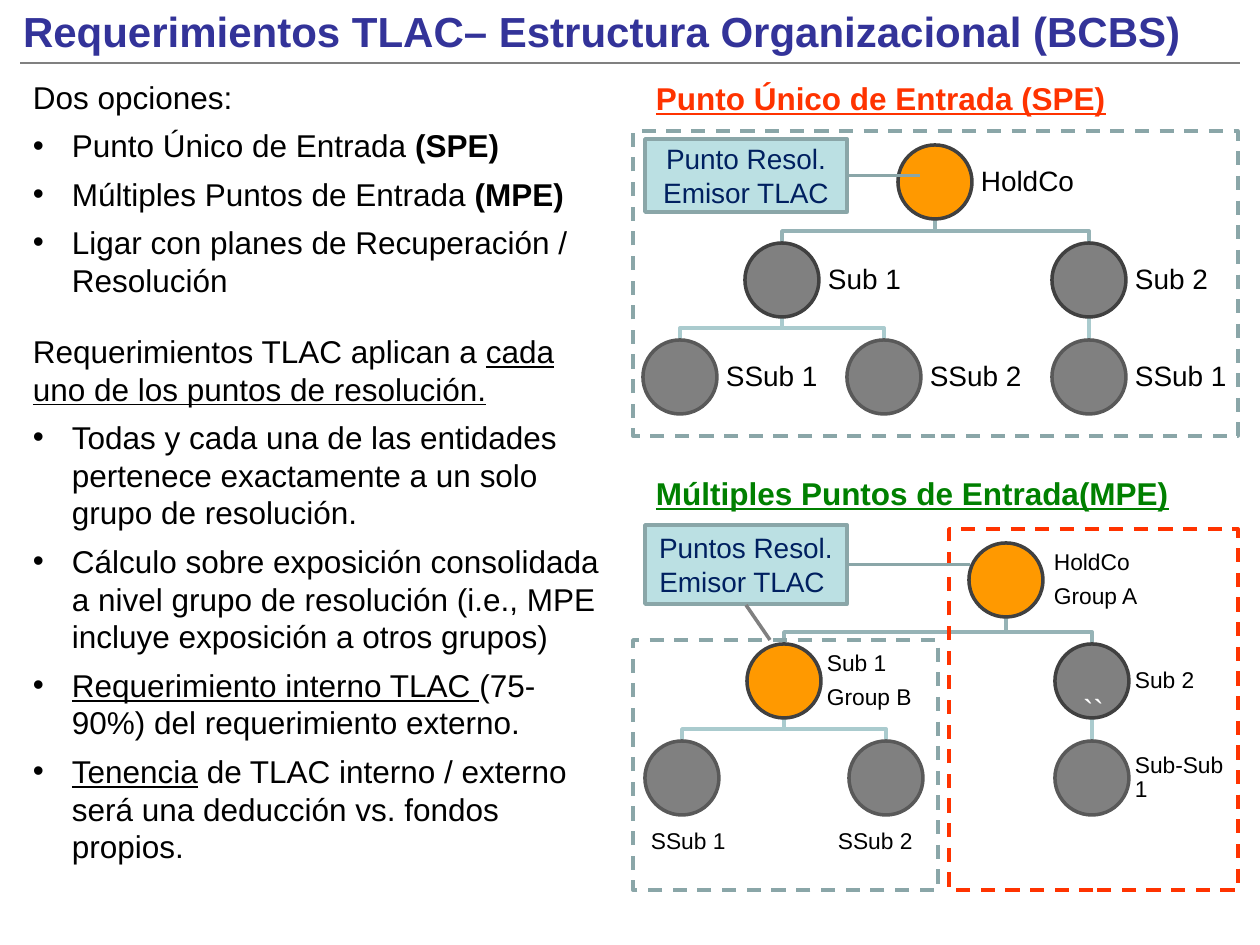
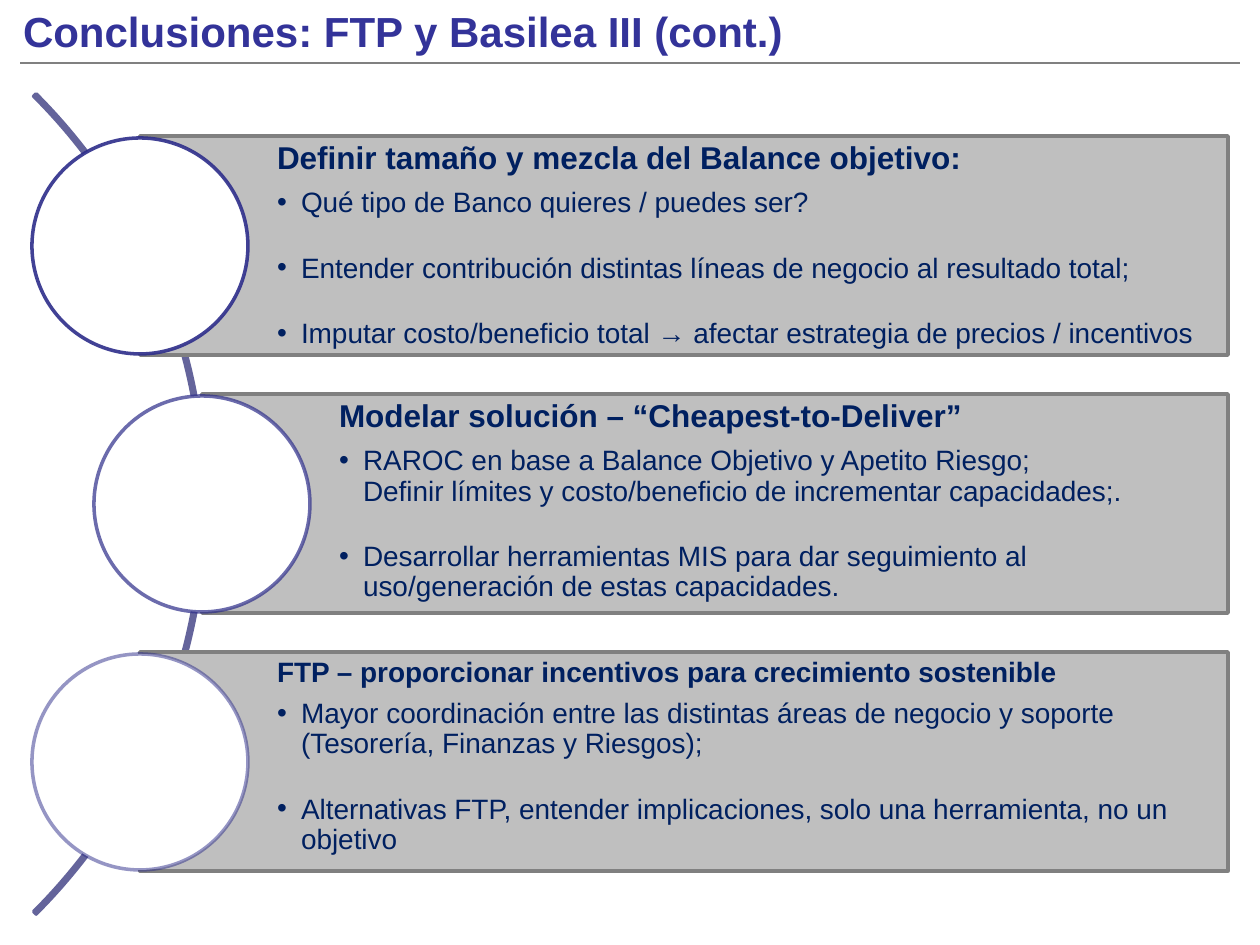
from dataclasses import dataclass

from lxml import etree
from pptx import Presentation
from pptx import util as u
from pptx.dml.color import RGBColor
from pptx.enum import dml, shapes, text
from pptx.oxml import ns

EMU_PER_PX = 914400 / 126
FONT = "Arial"
BLACK = RGBColor(0x00, 0x00, 0x00)
WHITE = RGBColor(0xFF, 0xFF, 0xFF)
TITLE_BLUE = RGBColor(0x33, 0x33, 0x99)
NAVY = RGBColor(0x00, 0x20, 0x60)
GRAY = RGBColor(0x80, 0x80, 0x80)
PANEL_GRAY = RGBColor(0xBF, 0xBF, 0xBF)
ORANGE = RGBColor(0xFF, 0x99, 0x00)
RED = RGBColor(0xFF, 0x33, 0x00)
GREEN = RGBColor(0x00, 0x80, 0x00)
CALLOUT_FILL = RGBColor(0xBB, 0xE0, 0xE3)
CALLOUT_LINE = RGBColor(0x8A, 0xA6, 0xA8)
UPPER_EDGE = RGBColor(0x96, 0xB3, 0xB6)
LOWER_EDGE = RGBColor(0xAA, 0xCB, 0xCE)
UPPER_RING = RGBColor(0x40, 0x40, 0x40)
LOWER_RING = RGBColor(0x59, 0x59, 0x59)
ARC_BLUE = RGBColor(0x64, 0x64, 0x9B)
RING_BLUE = RGBColor(0x2D, 0x2D, 0x8A)
NODE = 74
SHAPE = shapes.MSO_SHAPE
MIDDLE = text.MSO_ANCHOR.MIDDLE


@dataclass
class Entity:
    x: int
    y: int
    labels: tuple
    parent: int = -1
    level: int = 0
    fill: RGBColor = GRAY
    label_at: tuple = (NODE, 0)


def px(value):
    return round(value * EMU_PER_PX)


def box(*lengths):
    return [px(length) for length in lengths]


def set_margins(frame, left, top, right, bottom):
    frame.margin_left, frame.margin_top = px(left), px(top)
    frame.margin_right, frame.margin_bottom = px(right), px(bottom)
    frame.word_wrap = True


def write_paragraph(frame, runs, size, color=BLACK, bold=None, underline=None,
                    after=0, spacing=1.0, align=text.PP_ALIGN.LEFT, indent=0):
    paragraph = frame.paragraphs[0]
    if paragraph.runs:
        paragraph = frame.add_paragraph()
    paragraph.alignment = align
    paragraph.line_spacing = spacing
    paragraph.space_after = u.Pt(after)
    if indent:
        properties = paragraph._p.get_or_add_pPr()
        properties.set("marL", str(px(indent)))
        properties.set("indent", str(-px(indent)))
        etree.SubElement(properties, ns.qn("a:buFont"), typeface=FONT)
        etree.SubElement(properties, ns.qn("a:buChar"), char="•")
    font = paragraph.font
    font.name, font.size, font.bold, font.underline = FONT, u.Pt(size), bold, underline
    font.color.rgb = color
    for words, style in [(runs, "")] if isinstance(runs, str) else runs:
        for number, line in enumerate(words.split("\n")):
            if number:
                paragraph.add_line_break()
            run = paragraph.add_run()
            run.text = line
            if style == "bold":
                run.font.bold = True
            elif style == "underline":
                run.font.underline = True


def add_text(slide, bounds, margins=(13, 6, 13, 6), anchor=text.MSO_ANCHOR.TOP):
    frame = slide.shapes.add_textbox(*box(*bounds)).text_frame
    set_margins(frame, *margins)
    frame.vertical_anchor = anchor
    return frame


def style_line(line, color, width=2):
    line.color.rgb = color
    line.width = u.Pt(width)


def add_figure(slide, kind, bounds, line_color, fill=None):
    shape = slide.shapes.add_shape(kind, *box(*bounds))
    shape.shadow.inherit = False
    style_line(shape.line, line_color)
    if fill is None:
        shape.fill.background()
    else:
        shape.fill.solid()
        shape.fill.fore_color.rgb = fill
    return shape


def add_line(slide, start, end, color, width=2):
    connector = slide.shapes.add_connector(
        shapes.MSO_CONNECTOR.STRAIGHT, *box(*start, *end))
    style_line(connector.line, color, width)
    etree.SubElement(connector._element.spPr, ns.qn("a:effectLst"))


def add_title(slide, words):
    write_paragraph(add_text(slide, (10, 0, 1218, 63)), words, 24, TITLE_BLUE, bold=True)
    add_line(slide, (1240, 63), (20, 63), GRAY, 1.25)


def add_branch(slide, parent, child):
    color = UPPER_EDGE if child.level == 1 else LOWER_EDGE
    start = (parent.x + NODE // 2, parent.y + NODE)
    end = (child.x + NODE // 2, child.y)
    if start[0] == end[0]:
        add_line(slide, start, end, color)
        return
    bend = child.y - 12
    builder = slide.shapes.build_freeform(*start, scale=EMU_PER_PX)
    builder.add_line_segments([(start[0], bend), (end[0], bend), end], close=False)
    shape = builder.convert_to_shape()
    shape.shadow.inherit = False
    shape.fill.background()
    style_line(shape.line, color)


def add_tree(slide, entities, size, margin):
    for child in reversed(entities):
        if child.parent >= 0:
            add_branch(slide, entities[child.parent], child)
    for entity in entities:
        ring = LOWER_RING if entity.level == 2 else UPPER_RING
        add_figure(slide, SHAPE.OVAL, (entity.x, entity.y, NODE, NODE), ring, entity.fill)
        dx, dy = entity.label_at
        frame = add_text(slide, (entity.x + dx, entity.y + dy, 112, NODE),
                         [margin] * 4, MIDDLE)
        for label in entity.labels:
            write_paragraph(frame, label, size, after=size * 0.4, spacing=0.9)


def add_group_border(slide, bounds, color):
    shape = add_figure(slide, SHAPE.RECTANGLE, bounds, color)
    shape.line.dash_style = dml.MSO_LINE.DASH
    return shape


def add_callout(slide, bounds, reach, lines):
    shape = add_figure(slide, SHAPE.LINE_CALLOUT_1, bounds, CALLOUT_LINE, CALLOUT_FILL)
    for index, value in enumerate((0.5, reach, 0.5, 1)):
        shape.adjustments[index] = value
    set_margins(shape.text_frame, 13, 6, 13, 6)
    shape.text_frame.vertical_anchor = MIDDLE
    for line in lines:
        write_paragraph(shape.text_frame, line, 16, NAVY, align=text.PP_ALIGN.CENTER)


def add_panel(slide, left, top, heading, heading_size, bullets, opacity):
    panel = add_figure(slide, SHAPE.RECTANGLE, (left, top, 1228 - left, 219),
                       GRAY, PANEL_GRAY)
    frame = panel.text_frame
    frame.vertical_anchor = text.MSO_ANCHOR.TOP
    set_margins(frame, 137, 6, 6, 6)
    write_paragraph(frame, heading, heading_size, NAVY, bold=True,
                    after=heading_size * 0.4, spacing=0.9)
    for bullet in bullets:
        write_paragraph(frame, bullet, 16, NAVY, after=20, spacing=0.9, indent=24)
    circle = add_figure(slide, SHAPE.OVAL, (left - 108, top + 2, 216, 216),
                        RING_BLUE, WHITE)
    color = circle._element.spPr.find(ns.qn("a:ln")).find(".//" + ns.qn("a:srgbClr"))
    etree.SubElement(color, ns.qn("a:alpha"), val=str(opacity * 1000))


def build_requirements(slide):
    add_title(slide, "Requerimientos TLAC– Estructura Organizacional (BCBS)")
    frame = add_text(slide, (20, 72, 595, 832))
    bullet = 39
    content = [
        ("Dos opciones:", 0, 6),
        ([("Punto Único de Entrada ", ""), ("(SPE)", "bold")], bullet, 6),
        ([("Múltiples Puntos de Entrada ", ""), ("(MPE)", "bold")], bullet, 6),
        ("Ligar con planes de Recuperación / Resolución", bullet, 19),
        ([("Requerimientos TLAC aplican a ", ""),
          ("cada uno de los puntos de resolución.", "underline")], 0, 6),
        ("Todas y cada una de las entidades pertenece exactamente a un solo "
         "grupo de resolución.", bullet, 6),
        ("Cálculo sobre exposición consolidada a nivel grupo de resolución "
         "(i.e., MPE incluye exposición a otros grupos)", bullet, 6),
        ([("Requerimiento interno TLAC ", "underline"),
          ("(75-90%) del requerimiento externo.", "")], bullet, 6),
        ([("Tenencia", "underline"),
          (" de TLAC interno / externo será una deducción vs. fondos propios.", "")],
         bullet, 6),
    ]
    for runs, indent, after in content:
        write_paragraph(frame, runs, 18, after=after, indent=indent)

    single_entry = [
        Entity(898, 145, ("HoldCo",), fill=ORANGE),
        Entity(745, 243, ("Sub 1",), 0, 1),
        Entity(643, 340, ("SSub 1",), 1, 2),
        Entity(847, 340, ("SSub 2",), 1, 2),
        Entity(1052, 243, ("Sub 2",), 0, 1),
        Entity(1052, 340, ("SSub 1",), 4, 2),
    ]
    multiple_entry = [
        Entity(969, 543, ("HoldCo", "Group A"), fill=ORANGE, label_at=(79, 0)),
        Entity(747, 644, ("Sub 1", "Group B"), 0, 1, ORANGE),
        Entity(645, 741, ("SSub 1",), 1, 2, label_at=(0, 64)),
        Entity(849, 741, ("SSub 2",), 1, 2, label_at=(-17, 64)),
        Entity(1055, 644, ("Sub 2",), 0, 1),
        Entity(1055, 741, ("Sub-Sub 1",), 4, 2),
    ]
    add_tree(slide, single_entry, 16, 9)
    add_tree(slide, multiple_entry, 13, 6)
    for top, words, color in ((73, "Punto Único de Entrada (SPE)", RED),
                              (468, "Múltiples Puntos de Entrada(MPE)", GREEN)):
        write_paragraph(add_text(slide, (643, top, 597, 50)), words, 18, color,
                        bold=True, underline=True)

    add_group_border(slide, (633, 640, 305, 250), CALLOUT_LINE)
    add_group_border(slide, (633, 131, 605, 305), CALLOUT_LINE)
    holding_group = add_group_border(slide, (949, 529, 289, 361), RED)
    holding_group.text_frame.vertical_anchor = MIDDLE
    write_paragraph(holding_group.text_frame, "``", 18, WHITE,
                    align=text.PP_ALIGN.CENTER)
    add_callout(slide, (645, 139, 202, 73), 1.36, ["Punto Resol. Emisor TLAC"])
    add_callout(slide, (645, 525, 202, 79), 1.61, ["Puntos Resol. ", "Emisor TLAC "])
    add_line(slide, (746, 605), (770, 640), GRAY)


def build_conclusions(slide):
    add_title(slide, "Conclusiones: FTP y Basilea III (cont.)")
    arc = add_figure(slide, SHAPE.BLOCK_ARC, (-954, -76, 1160, 1160), ARC_BLUE)
    for index, value in enumerate((189, 27, 0.003)):
        arc.adjustments[index] = value
    panels = [
        (140, "Definir tamaño y mezcla del Balance objetivo:", 18,
         ["Qué tipo de Banco quieres / puedes ser?",
          "Entender contribución distintas líneas de negocio al resultado total;",
          "Imputar costo/beneficio total → afectar estrategia de precios / incentivos"],
         90),
        (202, "Modelar solución – “Cheapest-to-Deliver”", 18,
         ["RAROC en base a Balance Objetivo y Apetito Riesgo;\n"
          "Definir límites y costo/beneficio de incrementar capacidades;.",
          "Desarrollar herramientas MIS para dar seguimiento al uso/generación de "
          "estas capacidades."], 70),
        (140, "FTP – proporcionar incentivos para crecimiento sostenible", 16,
         ["Mayor coordinación entre las distintas áreas de negocio y soporte "
          "(Tesorería, Finanzas y Riesgos);",
          "Alternativas FTP, entender implicaciones, solo una herramienta, no un "
          "objetivo"], 50),
    ]
    for row, (left, *details) in enumerate(panels):
        add_panel(slide, left, 136 + row * 258, *details)


def main():
    presentation = Presentation()
    presentation.slide_width, presentation.slide_height = box(1260, 945)
    blank = presentation.slide_layouts[6]
    for build in (build_requirements, build_conclusions):
        build(presentation.slides.add_slide(blank))
    presentation.save("out.pptx")


if __name__ == "__main__":
    main()
